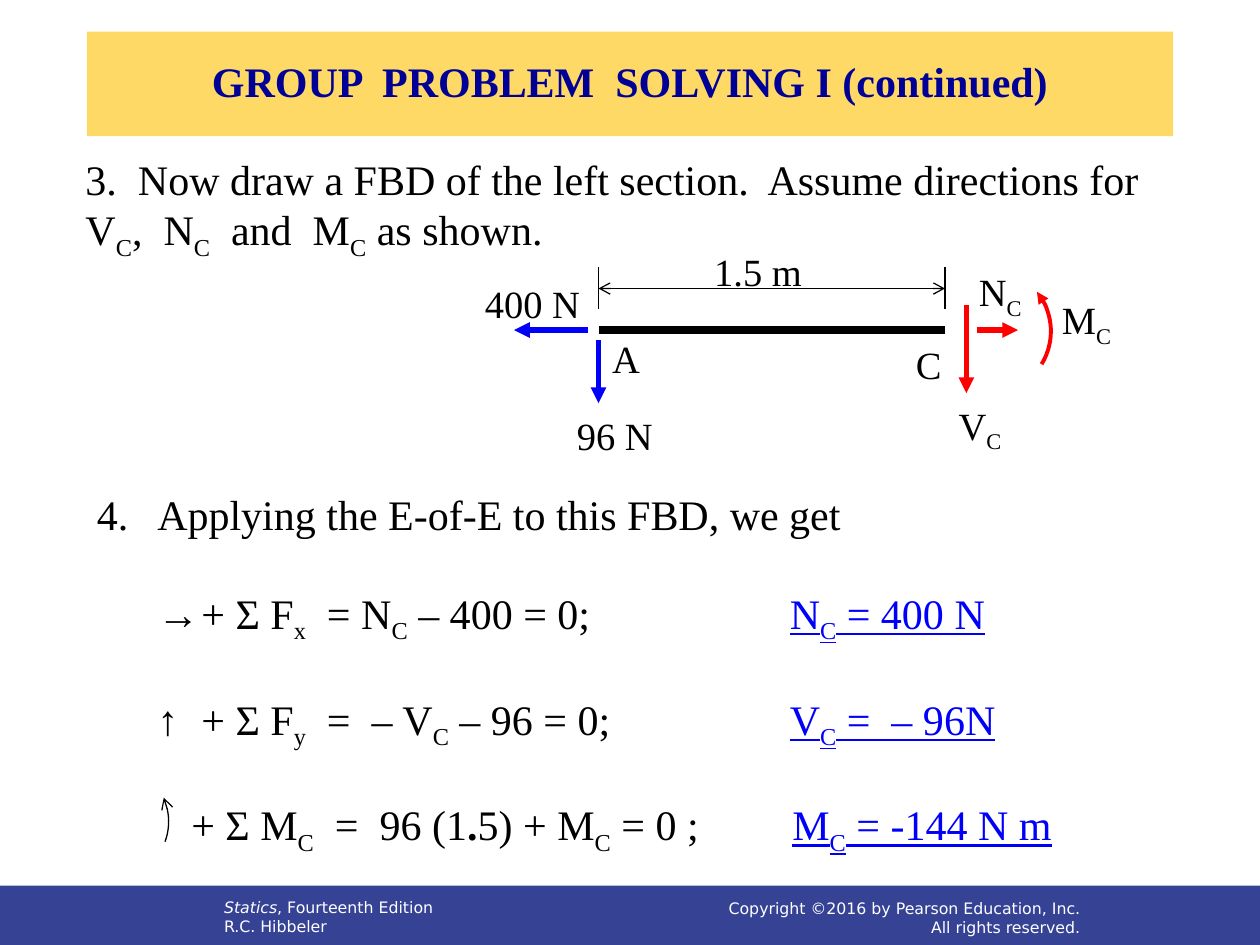
from lxml import etree
from pptx import Presentation
from pptx.dml.color import RGBColor
from pptx.enum.shapes import MSO_CONNECTOR, MSO_SHAPE
from pptx.enum.text import MSO_ANCHOR, MSO_AUTO_SIZE, PP_ALIGN
from pptx.oxml.ns import qn
from pptx.util import Inches, Pt

STRAIGHT = MSO_CONNECTOR.STRAIGHT
RECT, ARC = MSO_SHAPE.RECTANGLE, MSO_SHAPE.ARC
TOP, MIDDLE = MSO_ANCHOR.TOP, MSO_ANCHOR.MIDDLE
LEFT, CENTER, RIGHT = PP_ALIGN.LEFT, PP_ALIGN.CENTER, PP_ALIGN.RIGHT

BLACK = RGBColor(0x00, 0x00, 0x00)
WHITE = RGBColor(0xFF, 0xFF, 0xFF)
NAVY = RGBColor(0x00, 0x00, 0x96)
BLUE = RGBColor(0x00, 0x00, 0xFA)
RED = RGBColor(0xFF, 0x00, 0x00)
GOLD = RGBColor(0xFF, 0xD9, 0x66)
FOOTER_BLUE = RGBColor(0x36, 0x43, 0x95)

SERIF, SANS = "Times New Roman", "DejaVu Sans"


class SlideBuilder:
    """Holds the text style and the current slide."""

    body = {"name": SERIF, "size": Pt(24)}
    label = {"name": SERIF, "size": Pt(22)}
    footer = {"name": SANS, "size": Pt(9), "color": WHITE}
    answer = {"color": BLUE, "underline": True}

    def __init__(self, s):
        self.s = s

    def run(self, p, text, style):
        r = p.add_run()
        r.text = text
        style = {"color": BLACK, **style}
        r.font.color.rgb = style.pop("color")
        for name, value in style.items():
            setattr(r.font, name, value)
        return r

    def rich(self, p, text, style):
        """Add runs; the letter after each underscore is a subscript."""
        first, *rest = text.split("_")
        if first:
            self.run(p, first, style)
        for part in rest:
            r = self.run(p, part[0], style)
            r.font._element.set("baseline", "-25000")
            if part[1:]:
                self.run(p, part[1:], style)

    def text(self, x, y, w, h, paragraphs, style, align=LEFT, anchor=TOP):
        """Each paragraph is a list of (text, extra format) pairs."""
        sp = self.s.shapes.add_textbox(Inches(x), Inches(y), Inches(w), Inches(h))
        tf = sp.text_frame
        tf.word_wrap = True
        tf.vertical_anchor = anchor
        for i, parts in enumerate(paragraphs):
            p = tf.paragraphs[0] if i == 0 else tf.add_paragraph()
            p.alignment = align
            for text, extra in parts:
                self.rich(p, text, {**style, **extra})
        return tf

    def tabs(self, p, stops):
        tab_list = etree.SubElement(p._p.get_or_add_pPr(), qn("a:tabLst"))
        for stop in stops:
            etree.SubElement(tab_list, qn("a:tab"), pos=str(Inches(stop)), algn="l")

    def title(self, x, y, w, h, text):
        sp = self.s.shapes.title
        sp.left, sp.top, sp.width, sp.height = map(Inches, (x, y, w, h))
        sp.fill.solid()
        sp.fill.fore_color.rgb = GOLD
        tf = sp.text_frame
        tf.auto_size = MSO_AUTO_SIZE.NONE
        tf.vertical_anchor = MIDDLE
        p = tf.paragraphs[0]
        p.alignment, p.line_spacing = CENTER, 0.9
        self.run(p, text, {**self.body, "bold": True, "color": NAVY})

    def bar(self, x, y, w, h, color):
        sp = self.s.shapes.add_shape(RECT, Inches(x), Inches(y), Inches(w), Inches(h))
        sp.shadow.inherit = False
        sp.fill.solid()
        sp.fill.fore_color.rgb = color
        sp.line.fill.background()

    def stroke(self, sp, color, width, head=None, tail=None):
        sp.line.color.rgb = color
        sp.line.width = Pt(width)
        ln = sp.line._get_or_add_ln()
        for tag, kind in (("a:headEnd", head), ("a:tailEnd", tail)):
            if kind:
                etree.SubElement(ln, qn(tag), type=kind)

    def line(self, x1, y1, x2, y2, color, width, head=None, tail=None):
        cx = self.s.shapes.add_connector(
            STRAIGHT, Inches(x1), Inches(y1), Inches(x2), Inches(y2))
        self.stroke(cx, color, width, head, tail)
        etree.SubElement(cx._element.spPr, qn("a:effectLst"))

    def moment_arc(self, x, y, size, rotation, start, end):
        sp = self.s.shapes.add_shape(
            ARC, Inches(x), Inches(y), Inches(size), Inches(size))
        sp.rotation = rotation
        sp.adjustments[0], sp.adjustments[1] = start, end
        self.stroke(sp, RED, 2.25, head="triangle")
        sp.fill.background()
        sp.shadow.inherit = False

    def curve(self, points, steps=12):
        """Draw a cubic curve from its four control points."""
        def at(t):
            weights = ((1 - t) ** 3, 3 * t * (1 - t) ** 2, 3 * t * t * (1 - t), t ** 3)
            return tuple(Inches(sum(k * pt[i] for k, pt in zip(weights, points)))
                         for i in (0, 1))

        outline = [at(i / steps) for i in range(steps + 1)]
        fb = self.s.shapes.build_freeform(*outline[0])
        fb.add_line_segments(outline[1:], close=False)
        sp = fb.convert_to_shape()
        self.stroke(sp, BLACK, 0.75, tail="arrow")
        sp.fill.background()
        sp.shadow.inherit = False


def main():
    prs = Presentation()
    prs.slide_width, prs.slide_height = Inches(10), Inches(7.5)
    b = SlideBuilder(prs.slides.add_slide(prs.slide_layouts[5]))

    # Footer
    b.bar(0, 7.03, 10, 0.47, FOOTER_BLUE)
    b.text(1.68, 7.08, 2.9, 0.4,
           [[("Statics", {"italic": True}), (", Fourteenth Edition", {})],
            [("R.C. Hibbeler", {})]], b.footer)
    b.text(4.67, 7.07, 4, 0.43,
           [[("Copyright ©2016 by Pearson Education, Inc.", {})],
            [("All rights reserved.", {})]], b.footer, RIGHT, MIDDLE)

    # Title and step 3
    b.title(0.69, 0.25, 8.62, 0.83, "GROUP  PROBLEM  SOLVING I (continued)")
    b.text(0.58, 1.17, 8.58, 1,
           [[("3.  Now draw a FBD of the left section.  Assume directions for "
              "V_C,  N_C  and  M_C as shown.", {})]], b.body)

    # Step 4: equations of equilibrium, answers aligned by tab stops
    wide, narrow = (0.48, 0.83, 5.5), (0.75, 5.52)
    equations = [
        (wide, [("4.\tApplying the E-of-E to this FBD, we get", {})]),
        (wide, [("\t→\t+ Σ F_x  = N_C – 400 = 0;\t", {}),
                ("N_C = 400 N", b.answer)]),
        (wide, [("\t↑\t+ Σ F_y  =  – V_C – 96 = 0;\t", {}),
                ("V_C =  – 96N", b.answer)]),
        (narrow, [("\t+ Σ M_C  =  96 (1", {}), (".", {"bold": True}),
                  ("5) + M_C = 0 ;\t", {}), ("M_C = -144 N m", b.answer)]),
    ]
    tf = b.text(0.67, 3.83, 8, 2.93, [parts for _, parts in equations], b.body)
    for i, (p, (stops, _)) in enumerate(zip(tf.paragraphs, equations)):
        if i:
            p.space_before = Pt(27.6)
        b.tabs(p, stops)
    b.curve([(1.31, 6.68), (1.35, 6.58), (1.35, 6.45), (1.3, 6.33)])

    # Beam with its dimension line
    a, c, beam_y = 4.75, 7.5, 2.62
    b.line(a, beam_y, c, beam_y, BLACK, 4.5)
    for x in (a, c):
        b.line(x, 2.12, x, 2.45, BLACK, 0.75)
    b.line(a, 2.29, c, 2.29, BLACK, 0.75, "arrow", "arrow")

    # Forces and moment
    for x1, y1, x2, y2, color in (
            (a, 2.7, a, 3.2, BLUE),
            (4.67, beam_y, 4.08, beam_y, BLUE),
            (7.67, 2.42, 7.67, 3.12, RED),
            (7.75, beam_y, 8.08, beam_y, RED)):
        b.line(x1, y1, x2, y2, color, 3, tail="triangle")
    b.moment_arc(7.34, 2.13, 1, 42.2, 167.39, 209.57)

    # Diagram labels
    for x, y, w, text in (
            (4.48, 3.22, 0.85, "96 N"), (7.51, 3.14, 0.56, "V_C"),
            (8.33, 2.3, 0.61, "M_C"), (7.67, 2.08, 0.56, "N_C"),
            (5.57, 1.92, 1.18, "1.5 m"), (4.76, 2.61, 0.43, "A"),
            (3.75, 2.17, 0.97, "400 N"), (7.17, 2.66, 0.52, "C")):
        b.text(x, y, w, 0.47, [[(text, {})]], b.label)

    prs.save("out.pptx")


if __name__ == "__main__":
    main()
